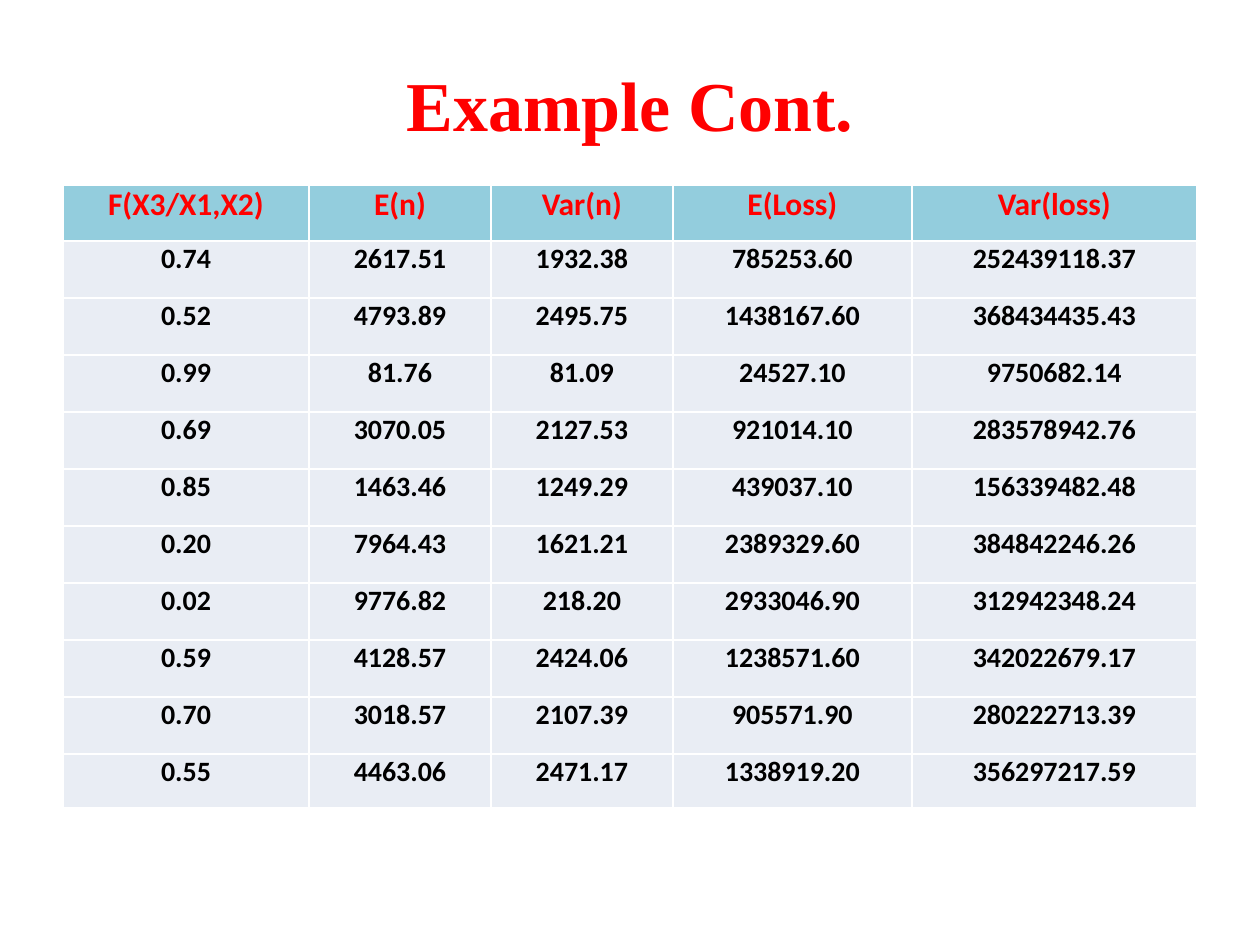
from lxml import etree
from pptx import Presentation
from pptx.dml.color import RGBColor
from pptx.enum.text import MSO_ANCHOR, PP_ALIGN
from pptx.oxml.ns import qn
from pptx.util import Emu, Pt

PX = 914400 / 126
CENTER = PP_ALIGN.CENTER
TOP, MIDDLE = MSO_ANCHOR.TOP, MSO_ANCHOR.MIDDLE
RED = RGBColor(0xFF, 0x00, 0x00)
BLACK = RGBColor(0x00, 0x00, 0x00)
WHITE = RGBColor(0xFF, 0xFF, 0xFF)
HEADER_FILL = RGBColor(0x93, 0xCD, 0xDD)
BODY_FILL = RGBColor(0xE9, 0xED, 0xF4)

COLUMN_WIDTHS = (246, 182, 182, 239, 285)
ROW_HEIGHTS = (56, *[57] * 9, 54)
HEADINGS = ("F(X3/X1,X2)", "E(n)", "Var(n)", "E(Loss)", "Var(loss)")
RESULTS = (
    ("0.74", "2617.51", "1932.38", "785253.60", "252439118.37"),
    ("0.52", "4793.89", "2495.75", "1438167.60", "368434435.43"),
    ("0.99", "81.76", "81.09", "24527.10", "9750682.14"),
    ("0.69", "3070.05", "2127.53", "921014.10", "283578942.76"),
    ("0.85", "1463.46", "1249.29", "439037.10", "156339482.48"),
    ("0.20", "7964.43", "1621.21", "2389329.60", "384842246.26"),
    ("0.02", "9776.82", "218.20", "2933046.90", "312942348.24"),
    ("0.59", "4128.57", "2424.06", "1238571.60", "342022679.17"),
    ("0.70", "3018.57", "2107.39", "905571.90", "280222713.39"),
    ("0.55", "4463.06", "2471.17", "1338919.20", "356297217.59"),
)


def px(length):
    """Turn pixels into EMU."""
    return Emu(round(length * PX))


def write(paragraph, text, font_name, size, color):
    """Write one bold, centred run."""
    paragraph.alignment = CENTER
    run = paragraph.add_run()
    run.text = text
    run.font.name = font_name
    run.font.size = Pt(size)
    run.font.bold = True
    run.font.color.rgb = color


def add_borders(cell):
    """Give a cell thin white borders on all four sides."""
    properties = cell._tc.get_or_add_tcPr()
    for position, side in enumerate(("lnL", "lnR", "lnT", "lnB")):
        border = etree.Element(qn(f"a:{side}"), w=str(Pt(1)))
        fill = etree.SubElement(border, qn("a:solidFill"))
        etree.SubElement(fill, qn("a:srgbClr"), val=str(WHITE))
        properties.insert(position, border)


def fill_cell(cell, text, size, color, fill):
    """Format one table cell and write its text."""
    cell.margin_left = cell.margin_right = cell.margin_top = px(1)
    cell.margin_bottom = 0
    cell.vertical_anchor = TOP
    cell.fill.solid()
    cell.fill.fore_color.rgb = fill
    add_borders(cell)
    write(cell.text_frame.paragraphs[0], text, "Calibri", size, color)


def place_title(slide, left, top, width, height):
    """Place the slide title in the given box."""
    title = slide.shapes.title
    title.left, title.top = px(left), px(top)
    title.width, title.height = px(width), px(height)
    title.text_frame.vertical_anchor = MIDDLE
    write(title.text_frame.paragraphs[0], "Example Cont.", "Times New Roman", 40, RED)


def place_results(slide, left, top):
    """Place the results table with its top left corner at the given point."""
    table = slide.shapes.add_table(
        len(ROW_HEIGHTS), len(COLUMN_WIDTHS), px(left), px(top),
        px(sum(COLUMN_WIDTHS)), px(sum(ROW_HEIGHTS))).table
    table.horz_banding = False
    for column, width in zip(table.columns, COLUMN_WIDTHS):
        column.width = px(width)
    for row, height, values in zip(table.rows, ROW_HEIGHTS, (HEADINGS, *RESULTS)):
        row.height = px(height)
        style = (18, RED, HEADER_FILL) if values is HEADINGS else (16, BLACK, BODY_FILL)
        for cell, value in zip(row.cells, values):
            fill_cell(cell, value, *style)


def main():
    """Build and save the slide."""
    presentation = Presentation()
    presentation.slide_width, presentation.slide_height = px(1260), px(945)
    slide = presentation.slides.add_slide(presentation.slide_layouts[5])
    place_title(slide, 63, 38, 1134, 131)
    place_results(slide, 63, 185)
    presentation.save("out.pptx")


if __name__ == "__main__":
    main()
